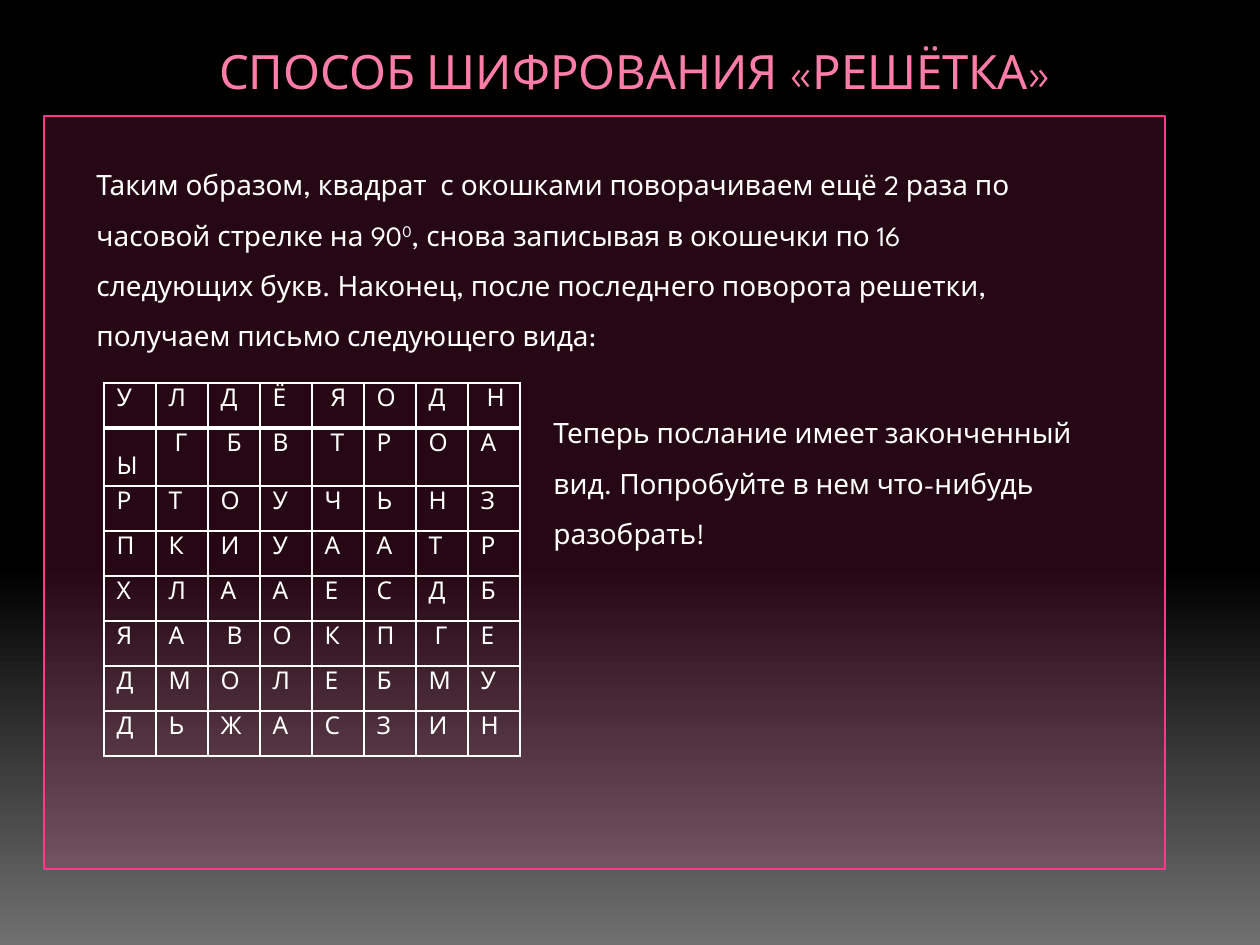
from dataclasses import dataclass

import pptx
import pptx.dml.color
import pptx.enum.shapes
import pptx.enum.text
import pptx.oxml
import pptx.oxml.ns
import pptx.util

RGBColor = pptx.dml.color.RGBColor
BLACK = RGBColor(0x00, 0x00, 0x00)
GRAY = RGBColor(0x70, 0x70, 0x70)
WHITE = RGBColor(0xFF, 0xFF, 0xFF)
PINK = RGBColor(0xFF, 0x38, 0x8C)
TITLE_PINK = RGBColor(0xFF, 0x7D, 0xA7)
TITLE_OUTLINE = RGBColor(0xB1, 0x27, 0x61)

FONT_NAME = "League Spartan"
PIXELS_PER_INCH = 126
THIN_BORDER, THICK_BORDER = 1, 3
COLUMN_WIDTH, ROW_HEIGHT = 52, 45

LETTER_ROWS = [
    ["У", "Л", "Д", "Ё", " Я", "О", "Д", " Н"],
    [" Ы", " Г", " Б", "В", " Т", "Р", "О", "А"],
    ["Р", "Т", "О", "У", "Ч", "Ь", "Н", "З"],
    ["П", "К", "И", "У", "А", "А", "Т", "Р"],
    ["Х", "Л", "А", "А", "Е", "С", "Д", "Б"],
    ["Я", "А", " В", "О", "К", "П", " Г", "Е"],
    ["Д", "М", "О", "Л", "Е", "Б", "М", "У"],
    ["Д", "Ь", "Ж", "А", "С", "З", "И", "Н"],
]


@dataclass(frozen=True)
class Box:
    left: int
    top: int
    width: int
    height: int

    def emu(self) -> tuple[int, ...]:
        return tuple(px(value) for value in (self.left, self.top, self.width, self.height))


@dataclass(frozen=True)
class TextRun:
    text: str
    superscript: bool = False


@dataclass(frozen=True)
class TextBlock:
    box: Box
    runs: tuple[TextRun, ...]


TEXT_BLOCKS = [
    TextBlock(Box(84, 145, 963, 267), (
        TextRun("Таким образом, квадрат  с окошками поворачиваем ещё 2 раза "
                "по часовой стрелке на 90"),
        TextRun("0", superscript=True),
        TextRun(", снова записывая в окошечки по 16 следующих букв. Наконец, "
                "после последнего поворота решетки, получаем письмо следующего вида:"),
    )),
    TextBlock(Box(541, 393, 586, 215), (
        TextRun("Теперь послание имеет законченный вид. "
                "Попробуйте в нем что-нибудь разобрать!"),
    )),
]


def px(pixels: int) -> int:
    return pptx.util.Emu(round(pixels * 914400 / PIXELS_PER_INCH))


def format_font(paragraph, size: int, color: RGBColor) -> None:
    paragraph.font.name = FONT_NAME
    paragraph.font.size = pptx.util.Pt(size)
    paragraph.font.color.rgb = color


def line_xml(tag: str, points: float, color: RGBColor):
    return pptx.oxml.parse_xml(
        f'<a:{tag} {pptx.oxml.ns.nsdecls("a")} w="{pptx.util.Pt(points)}">'
        f'<a:solidFill><a:srgbClr val="{color}"/></a:solidFill></a:{tag}>'
    )


def paint_background(slide) -> None:
    fill = slide.background.fill
    fill.gradient()
    fill.gradient_angle = 270
    for stop, position, color in zip(fill.gradient_stops, (0.6, 1), (BLACK, GRAY)):
        stop.position = position
        stop.color.rgb = color


def write_title(slide) -> None:
    title = slide.shapes.title
    title.left, title.top, title.width, title.height = Box(55, 36, 1160, 69).emu()
    frame = title.text_frame
    frame.auto_size = pptx.enum.text.MSO_AUTO_SIZE.NONE
    frame.vertical_anchor = pptx.enum.text.MSO_ANCHOR.BOTTOM
    paragraph = frame.paragraphs[0]
    paragraph.alignment = pptx.enum.text.PP_ALIGN.CENTER
    format_font(paragraph, 27, TITLE_PINK)
    run = paragraph.add_run()
    run.text = "СПОСОБ ШИФРОВАНИЯ «РЕШЁТКА»"
    run.font.color.rgb = TITLE_PINK
    run.font._element.insert(0, line_xml("ln", 0.5, TITLE_OUTLINE))


def add_panel(slide) -> None:
    panel = slide.shapes.add_shape(
        pptx.enum.shapes.MSO_SHAPE.RECTANGLE, *Box(44, 116, 1121, 753).emu())
    panel.shadow.inherit = False
    panel.fill.solid()
    panel.fill.fore_color.rgb = PINK
    color = panel._element.spPr.find(
        f'{pptx.oxml.ns.qn("a:solidFill")}/{pptx.oxml.ns.qn("a:srgbClr")}')
    color.append(pptx.oxml.parse_xml(
        f'<a:alpha {pptx.oxml.ns.nsdecls("a")} val="15000"/>'))
    panel.line.color.rgb = PINK
    panel.line.width = pptx.util.Pt(0.75)


def add_text_block(slide, block: TextBlock) -> None:
    frame = slide.shapes.add_textbox(*block.box.emu()).text_frame
    frame.word_wrap = True
    frame.auto_size = pptx.enum.text.MSO_AUTO_SIZE.SHAPE_TO_FIT_TEXT
    paragraph = frame.paragraphs[0]
    paragraph.line_spacing = 1.5
    format_font(paragraph, 16, WHITE)
    for text_run in block.runs:
        run = paragraph.add_run()
        run.text = text_run.text
        if text_run.superscript:
            run.font._element.set("baseline", "30000")


def format_cell(cell, letter: str, top_border: int, bottom_border: int) -> None:
    cell.text = letter
    format_font(cell.text_frame.paragraphs[0], 14, WHITE)
    borders = {"lnL": THIN_BORDER, "lnR": THIN_BORDER,
               "lnT": top_border, "lnB": bottom_border}
    properties = cell._tc.get_or_add_tcPr()
    for tag, points in borders.items():
        properties.append(line_xml(tag, points, WHITE))
    cell.fill.background()


def add_letter_grid(slide) -> None:
    """Add the letters, with a thick rule below the first row."""
    row_count, column_count = len(LETTER_ROWS), len(LETTER_ROWS[0])
    box = Box(104, 383, column_count * COLUMN_WIDTH, row_count * ROW_HEIGHT)
    table = slide.shapes.add_table(row_count, column_count, *box.emu()).table
    table.first_row = table.horz_banding = False
    for row_index, letters in enumerate(LETTER_ROWS):
        top_border = THICK_BORDER if row_index == 1 else THIN_BORDER
        bottom_border = THICK_BORDER if row_index == 0 else THIN_BORDER
        for column_index, letter in enumerate(letters):
            format_cell(table.cell(row_index, column_index), letter,
                        top_border, bottom_border)


def main() -> None:
    presentation = pptx.Presentation()
    presentation.slide_width, presentation.slide_height = px(1260), px(945)
    slide = presentation.slides.add_slide(
        presentation.slide_layouts.get_by_name("Title Only"))
    paint_background(slide)
    write_title(slide)
    add_panel(slide)
    add_letter_grid(slide)
    for block in TEXT_BLOCKS:
        add_text_block(slide, block)
    presentation.save("out.pptx")


if __name__ == "__main__":
    main()
